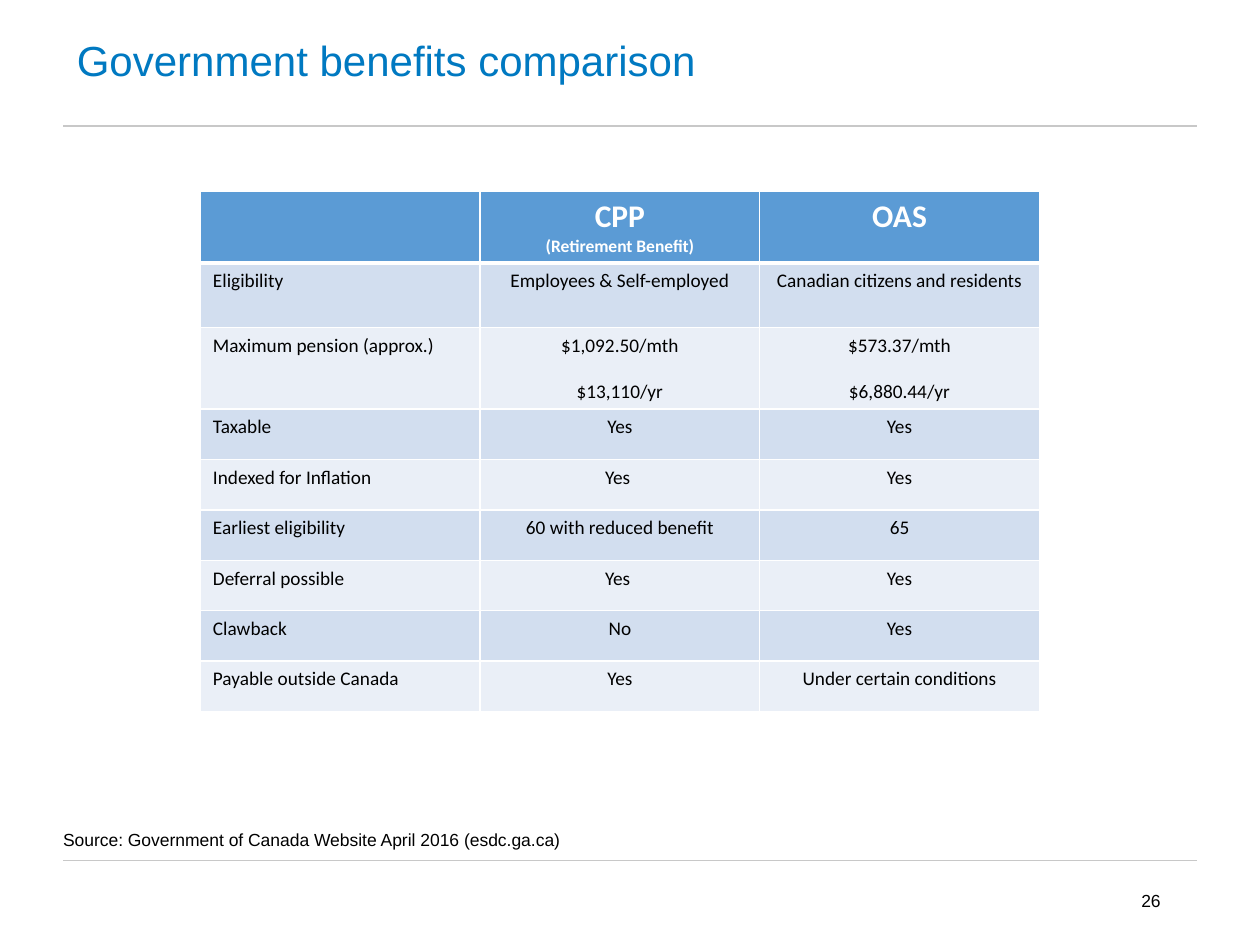
from lxml import etree
from pptx import Presentation
from pptx import util as u
from pptx.dml.color import RGBColor
from pptx.enum import shapes, text
from pptx.oxml import parse_xml
from pptx.oxml.ns import nsdecls, qn

Inches, Pt = u.Inches, u.Pt
BLUE = RGBColor(0x00, 0x79, 0xC1)
BLACK = RGBColor(0x00, 0x00, 0x00)
WHITE = RGBColor(0xFF, 0xFF, 0xFF)
RULE_GREY = RGBColor(0xC8, 0xC8, 0xC8)
HEADER_FILL = RGBColor(0x5B, 0x9B, 0xD5)
BAND_FILLS = [RGBColor(0xEA, 0xEF, 0xF7), RGBColor(0xD2, 0xDE, 0xEF)]


def style(paragraph, font_name, size, color, bold=False):
    font = paragraph.font
    font.name, font.size, font.bold = font_name, Pt(size), bold
    font.color.rgb = color


def add_borders(cell, bottom_width):
    properties = cell._tc.get_or_add_tcPr()
    for position, side in enumerate("LRTB"):
        width = Pt(bottom_width if side == "B" else 1)
        properties.insert(position, parse_xml(
            f'<a:ln{side} {nsdecls("a")} w="{width}"><a:solidFill>'
            f'<a:srgbClr val="{WHITE}"/></a:solidFill></a:ln{side}>'))


prs = Presentation()
prs.slide_width, prs.slide_height = Inches(10), Inches(7.5)
slide = prs.slides.add_slide(prs.slide_layouts[5])

# Rules above and below the content
for y in (6.83, 1):
    rule = slide.shapes.add_connector(
        shapes.MSO_CONNECTOR.STRAIGHT, Inches(0.5), Inches(y), Inches(9.5), Inches(y))
    rule.line.color.rgb = RULE_GREY
    rule.line.width = Pt(0.75)
    etree.SubElement(rule._element.spPr, qn("a:effectLst"))

# Title
title = slide.shapes.title
title.left, title.top, title.width, title.height = Inches(0.51), Inches(0), Inches(9), Inches(1)
title.text_frame.text = "Government benefits comparison"
title.text_frame.auto_size = text.MSO_AUTO_SIZE.NONE
title.text_frame.vertical_anchor = text.MSO_ANCHOR.MIDDLE
heading = title.text_frame.paragraphs[0]
heading.alignment = text.PP_ALIGN.LEFT
heading.line_spacing = 0.9
style(heading, "Arial", 24, BLUE)

# Slide number
number = slide.shapes.add_textbox(Inches(7.06), Inches(6.95), Inches(2.25), Inches(0.4)).text_frame
number.word_wrap = True
number.vertical_anchor = text.MSO_ANCHOR.MIDDLE
number.text = "26"
number.paragraphs[0].alignment = text.PP_ALIGN.RIGHT
style(number.paragraphs[0], "Arial", 10, BLACK)

# Benefits table
benefits = [
    ("", "CPP\n(Retirement Benefit)", "OAS"),
    ("Eligibility", "Employees & Self-employed", "Canadian citizens and residents"),
    ("Maximum pension (approx.)", "$1,092.50/mth\n$13,110/yr", "$573.37/mth\n$6,880.44/yr"),
    ("Taxable", "Yes", "Yes"),
    ("Indexed for Inflation", "Yes ", "Yes"),
    ("Earliest eligibility", "60 with reduced benefit", "65"),
    ("Deferral possible", "Yes ", "Yes"),
    ("Clawback", "No", "Yes"),
    ("Payable outside Canada", "Yes", "Under certain conditions"),
]
row_heights = [0.56, 0.51, 0.65] + [0.4] * 6
table = slide.shapes.add_table(
    len(benefits), 3, Inches(1.59), Inches(1.52), Inches(6.67), Inches(sum(row_heights))).table
for column in table.columns:
    column.width = Inches(2.22)
for r, (entries, height) in enumerate(zip(benefits, row_heights)):
    table.rows[r].height = Inches(height)
    is_header = r == 0
    for c, entry in enumerate(entries):
        cell = table.cell(r, c)
        cell.fill.solid()
        cell.fill.fore_color.rgb = HEADER_FILL if is_header else BAND_FILLS[r % 2]
        add_borders(cell, 3 if is_header else 1)
        cell.text = entry
        for line, paragraph in enumerate(cell.text_frame.paragraphs):
            if c > 0:
                paragraph.alignment = text.PP_ALIGN.CENTER
            if is_header:
                style(paragraph, "Calibri", 10 if line else 18, WHITE, bold=True)
            else:
                style(paragraph, "Calibri", 11, BLACK)
                if line:
                    paragraph.space_before = Pt(13)

# Source note
source = slide.shapes.add_textbox(Inches(0.5), Inches(6.38), Inches(8.99), Inches(0.37)).text_frame
source.word_wrap = True
source.vertical_anchor = text.MSO_ANCHOR.BOTTOM
source.margin_left = source.margin_right = source.margin_top = source.margin_bottom = 0
source.text = "Source: Government of Canada Website April 2016 (esdc.ga.ca)"
style(source.paragraphs[0], "Arial", 10, BLACK)

prs.save("out.pptx")
